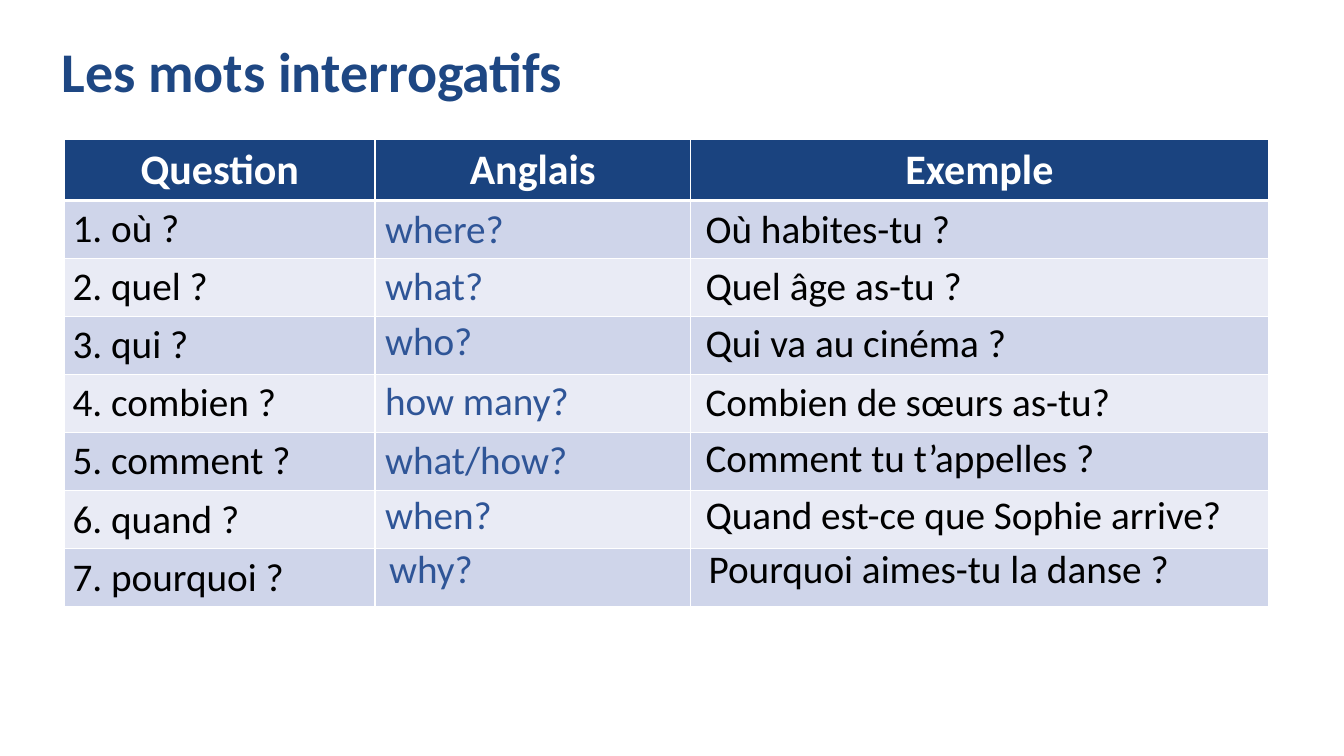
from dataclasses import dataclass

from lxml import etree
from pptx import Presentation
from pptx.dml.color import RGBColor
from pptx.enum.text import MSO_ANCHOR, MSO_AUTO_SIZE, PP_ALIGN
from pptx.oxml.ns import qn
from pptx.util import Emu, Pt

LEFT, CENTER = PP_ALIGN.LEFT, PP_ALIGN.CENTER
TOP, MIDDLE = MSO_ANCHOR.TOP, MSO_ANCHOR.MIDDLE
GROW, FIXED = MSO_AUTO_SIZE.SHAPE_TO_FIT_TEXT, MSO_AUTO_SIZE.NONE

NAVY = RGBColor(0x1E, 0x47, 0x83)
HEAD = RGBColor(0x1A, 0x43, 0x7F)
BLUE = RGBColor(0x2F, 0x55, 0x97)
DARK = RGBColor(0xCF, 0xD5, 0xEA)
PALE = RGBColor(0xE9, 0xEB, 0xF5)
BLACK = RGBColor(0, 0, 0)
WHITE = RGBColor(255, 255, 255)

FONT = "Calibri"
SCALE = 9144  # EMU in one px, 100 px to the inch


@dataclass
class Label:
    text: str
    left: int
    top: int
    width: int


@dataclass
class Entry:
    word: str
    gloss: Label
    sample: Label


HEADS = ["Question", "Anglais", "Exemple"]
WIDTHS = [308, 313, 573]
ENTRIES = [
    Entry("où ?", Label("where?", 372, 198, 181),
          Label("Où habites-tu ?", 690, 198, 329)),
    Entry("quel ?", Label("what?", 372, 254, 181),
          Label("Quel âge as-tu ?", 690, 254, 329)),
    Entry("qui ?", Label("who?", 372, 309, 181),
          Label("Qui va au cinéma ?", 690, 311, 329)),
    Entry("combien ?", Label("how many?", 372, 368, 229),
          Label("Combien de sœurs as-tu?", 690, 369, 467)),
    Entry("comment ?", Label("what/how?", 372, 427, 229),
          Label("Comment tu t’appelles ?", 690, 425, 467)),
    Entry("quand ?", Label("when?", 372, 482, 229),
          Label("Quand est-ce que Sophie arrive?", 690, 482, 561)),
    Entry("pourquoi ?", Label("why?", 376, 535, 229),
          Label("Pourquoi aimes-tu la danse ?", 693, 535, 561)),
]


def px(count: int) -> Emu:
    return Emu(count * SCALE)


def write(frame, text: str, size: int = 28, color: RGBColor = BLACK,
          bold: bool = False, align=LEFT, line: float = 1.0) -> None:
    para = frame.paragraphs[0]
    para.alignment = align
    para.line_spacing = line
    run = para.add_run()
    run.text = text
    font = run.font
    font.name, font.size, font.bold = FONT, Pt(size), bold
    font.color.rgb = color


def edge(cell, tag: str, width: int) -> None:
    side = etree.SubElement(cell._tc.get_or_add_tcPr(), qn(tag), w=str(Pt(width)))
    fill = etree.SubElement(side, qn("a:solidFill"))
    etree.SubElement(fill, qn("a:srgbClr"), val=str(WHITE))


def paint(cell, row: int) -> None:
    edge(cell, "a:lnL", 1)
    edge(cell, "a:lnR", 1)
    edge(cell, "a:lnT", 3 if row == 1 else 1)
    edge(cell, "a:lnB", 3 if row == 0 else 1)
    cell.fill.solid()
    cell.fill.fore_color.rgb = HEAD if row == 0 else DARK if row % 2 else PALE
    cell.margin_left = cell.margin_right = px(8)
    cell.margin_top = cell.margin_bottom = px(5)
    cell.vertical_anchor = MIDDLE if row == 0 else TOP


def add_title(slide, text: str) -> None:
    title = slide.shapes.title
    title.left, title.top, title.width, title.height = map(px, (51, 40, 1150, 68))
    frame = title.text_frame
    frame.auto_size = FIXED
    frame.vertical_anchor = MIDDLE
    write(frame, text, size=40, color=NAVY, bold=True, line=0.9)


def add_grid(slide) -> None:
    rows = len(ENTRIES) + 1
    grid = slide.shapes.add_table(rows, len(HEADS), px(64), px(138),
                                  px(sum(WIDTHS)), px(460)).table
    for col, width in zip(grid.columns, WIDTHS):
        col.width = px(width)
    for num, row in enumerate(grid.rows):
        row.height = px(57 if num else 61)
        for cell in row.cells:
            paint(cell, num)
    for col, head in enumerate(HEADS):
        write(grid.cell(0, col).text_frame, head, size=30, color=WHITE,
              bold=True, align=CENTER)
    for num, entry in enumerate(ENTRIES, 1):
        write(grid.cell(num, 0).text_frame, f"{num}. {entry.word}")


def add_label(slide, label: Label, color: RGBColor) -> None:
    box = slide.shapes.add_textbox(px(label.left), px(label.top),
                                   px(label.width), px(57))
    frame = box.text_frame
    frame.word_wrap = True
    frame.auto_size = GROW
    write(frame, label.text, color=color)


def main() -> None:
    deck = Presentation()
    deck.slide_width, deck.slide_height = px(1333), px(750)
    slide = deck.slides.add_slide(deck.slide_layouts[5])

    # Title and table
    add_title(slide, "Les mots interrogatifs")
    add_grid(slide)

    # Answers laid over the table
    for entry in ENTRIES:
        add_label(slide, entry.gloss, BLUE)
        add_label(slide, entry.sample, BLACK)

    deck.save("out.pptx")


if __name__ == "__main__":
    main()
